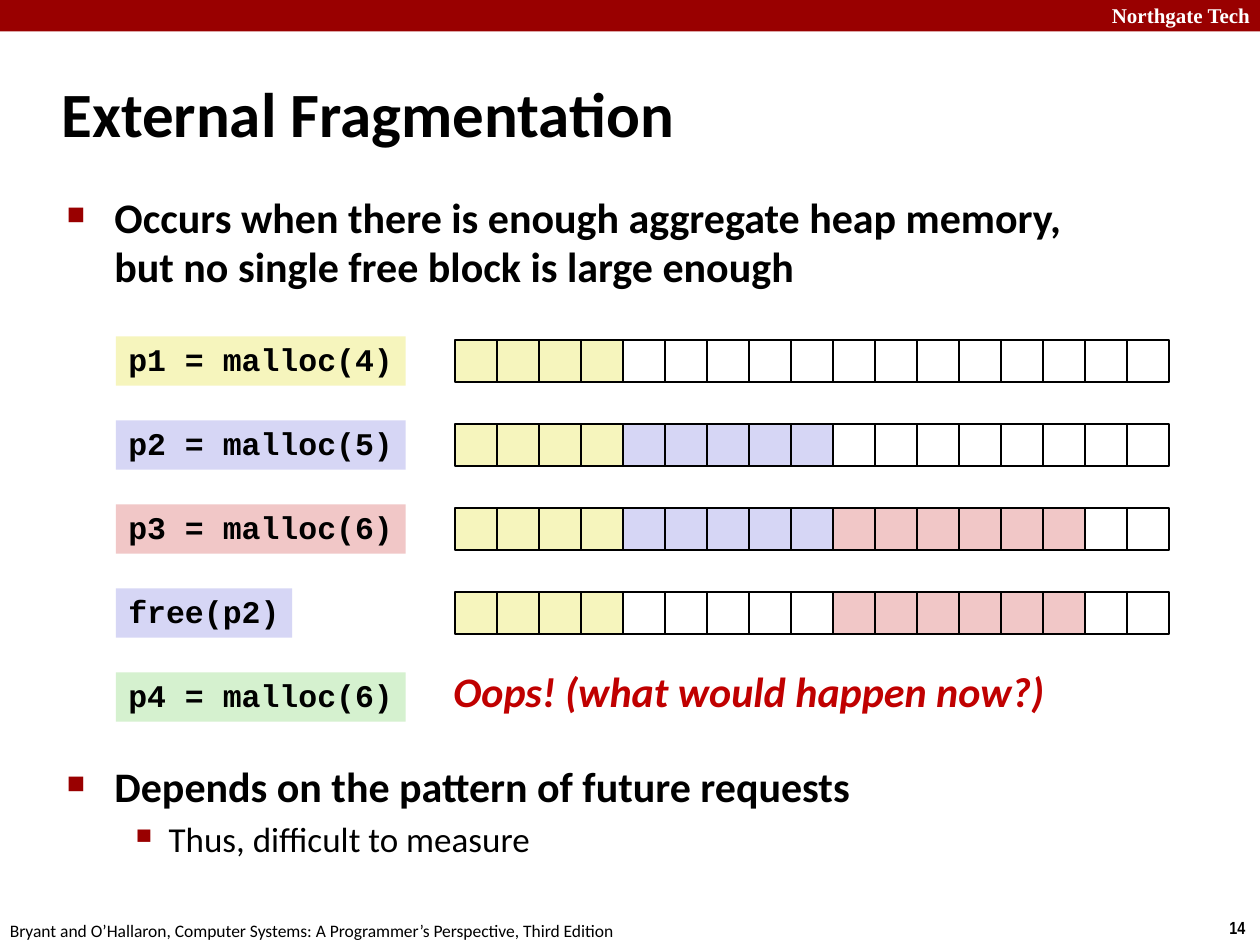
import lxml.etree
import pptx
import pptx.dml.color
import pptx.enum.shapes
import pptx.enum.text
import pptx.oxml.ns
import pptx.util

Inches = pptx.util.Inches
ALIGN = pptx.enum.text.PP_ALIGN

BLACK, WHITE, DARK_RED, ALERT_RED = "000000", "FFFFFF", "990000", "C00000"
FREE, P1, P2, P3, P4 = WHITE, "F6F5BD", "D6D6F5", "F1C7C7", "D5F1CF"
HEAP_STEPS = [
    ("p1 = malloc(4)", P1, [(P1, 4), (FREE, 13)]),
    ("p2 = malloc(5)", P2, [(P1, 4), (P2, 5), (FREE, 8)]),
    ("p3 = malloc(6)", P3, [(P1, 4), (P2, 5), (P3, 6), (FREE, 2)]),
    ("free(p2)", P2, [(P1, 4), (FREE, 5), (P3, 6), (FREE, 2)]),
    ("p4 = malloc(6)", P4, []),
]


def rgb(color):
    """Turn a hex string into a colour."""
    return pptx.dml.color.RGBColor.from_string(color)


def style(paragraph, size, color=BLACK, face="Calibri", bold=False, italic=False):
    """Set the font of a whole paragraph."""
    font = paragraph.font
    font.size, font.name = pptx.util.Pt(size), face
    font.bold, font.italic = bold, italic
    font.color.rgb = rgb(color)


def add_rect(slide, left, top, width, height, fill, line=None):
    """Add a flat rectangle, outlined if a line colour is given."""
    rect = slide.shapes.add_shape(
        pptx.enum.shapes.MSO_SHAPE.RECTANGLE,
        Inches(left), Inches(top), Inches(width), Inches(height))
    rect.shadow.inherit = False
    rect.fill.solid()
    rect.fill.fore_color.rgb = rgb(fill)
    if line:
        rect.line.color.rgb = rgb(line)
        rect.line.width = pptx.util.Pt(1)
    else:
        rect.line.fill.background()
    return rect


def add_text(slide, left, top, width, height, text, size, wrap=False, **font):
    """Add a one-paragraph text box and return its frame."""
    frame = slide.shapes.add_textbox(
        Inches(left), Inches(top), Inches(width), Inches(height)).text_frame
    frame.word_wrap = wrap
    frame.text = text
    style(frame.paragraphs[0], size, **font)
    return frame


def add_bullet(paragraph, mark, percent, margin, indent):
    """Give a paragraph a red bullet and a hanging indent."""
    paragraph.line_spacing = 0.98
    props = paragraph._p.get_or_add_pPr()
    props.set("marL", str(Inches(margin)))
    props.set("indent", str(-Inches(indent)))
    qn = pptx.oxml.ns.qn
    mark_color = lxml.etree.SubElement(props, qn("a:buClr"))
    lxml.etree.SubElement(mark_color, qn("a:srgbClr"), val=DARK_RED)
    lxml.etree.SubElement(props, qn("a:buSzPct"), val=str(percent * 1000))
    lxml.etree.SubElement(props, qn("a:buChar"), char=mark)


def add_points(slide, left, top, width, height, point, detail=None):
    """Add a main point and, below it, an optional detail."""
    frame = slide.shapes.add_textbox(
        Inches(left), Inches(top), Inches(width), Inches(height)).text_frame
    frame.word_wrap = True
    main = frame.paragraphs[0]
    main.text = point
    add_bullet(main, "■", 60, 0.38, 0.38)
    style(main, 24, bold=True)
    if detail:
        sub = frame.add_paragraph()
        sub.text = detail
        sub.level = 1
        sub.space_before = pptx.util.Pt(4)
        add_bullet(sub, "▪", 110, 0.81, 0.31)
        style(sub, 20)


def add_call(slide, left, top, call, fill):
    """Add a code label as wide as its monospaced text."""
    label = add_rect(slide, left, top, 0.2 + 0.15 * len(call), 0.39, fill)
    frame = label.text_frame
    frame.word_wrap = False
    frame.vertical_anchor = pptx.enum.text.MSO_ANCHOR.TOP
    frame.text = call
    code = frame.paragraphs[0]
    code.alignment = ALIGN.LEFT
    code.line_spacing = 0.94
    style(code, 18, face="Courier New", bold=True)


def add_heap(slide, left, top, cell, blocks):
    """Add a row of square heap words, coloured block by block."""
    words = [color for color, count in blocks for _ in range(count)]
    for index, color in enumerate(words):
        add_rect(slide, left + index * cell, top, cell, cell, color, BLACK)


def add_trace(slide, left, top):
    """Add the allocation calls with the heap after each of them."""
    pitch = 2 / 3
    for row, (call, color, blocks) in enumerate(HEAP_STEPS):
        row_top = top + row * pitch
        add_call(slide, left, row_top, call, color)
        add_heap(slide, left + 2.69, row_top + 0.03, 1 / 3, blocks)
    add_text(slide, left + 2.58, top + 2.56, 4.93, 0.5,
             "Oops! (what would happen now?)", 24,
             color=ALERT_RED, bold=True, italic=True)


def add_frame(slide, width, height):
    """Add the top band, the source line and the page number."""
    add_rect(slide, 0, 0, width, 0.25, DARK_RED)
    school = add_text(slide, width - 1.98, -0.03, 2, 0.3, "Northgate Tech", 12,
                      color=WHITE, face="Times New Roman", bold=True)
    school.word_wrap = True
    school.paragraphs[0].alignment = ALIGN.RIGHT
    add_text(slide, width - 0.34, height - 0.27, 0.34, 0.27, "14", 10,
             face="Arial Narrow", bold=True)
    add_text(slide, -0.02, height - 0.25, 5.08, 0.27,
             "Bryant and O’Hallaron, Computer Systems: "
             "A Programmer’s Perspective, Third Edition", 10)


def main():
    """Build the slide and save it."""
    deck = pptx.Presentation()
    deck.slide_width, deck.slide_height = Inches(10), Inches(7.5)
    slide = deck.slides.add_slide(deck.slide_layouts[6])
    add_frame(slide, 10, 7.5)
    title = add_text(slide, 0.39, 0.48, 8.3, 0.83, "External Fragmentation", 36,
                     wrap=True, bold=True)
    title.vertical_anchor = pptx.enum.text.MSO_ANCHOR.MIDDLE
    add_points(slide, 0.43, 1.49, 8.5, 0.9,
               "Occurs when there is enough aggregate heap memory, "
               "but no single free block is large enough")
    add_trace(slide, 0.92, 2.67)
    add_points(slide, 0.43, 6.01, 8.5, 0.9,
               "Depends on the pattern of future requests",
               "Thus, difficult to measure")
    deck.save("out.pptx")


if __name__ == "__main__":
    main()
